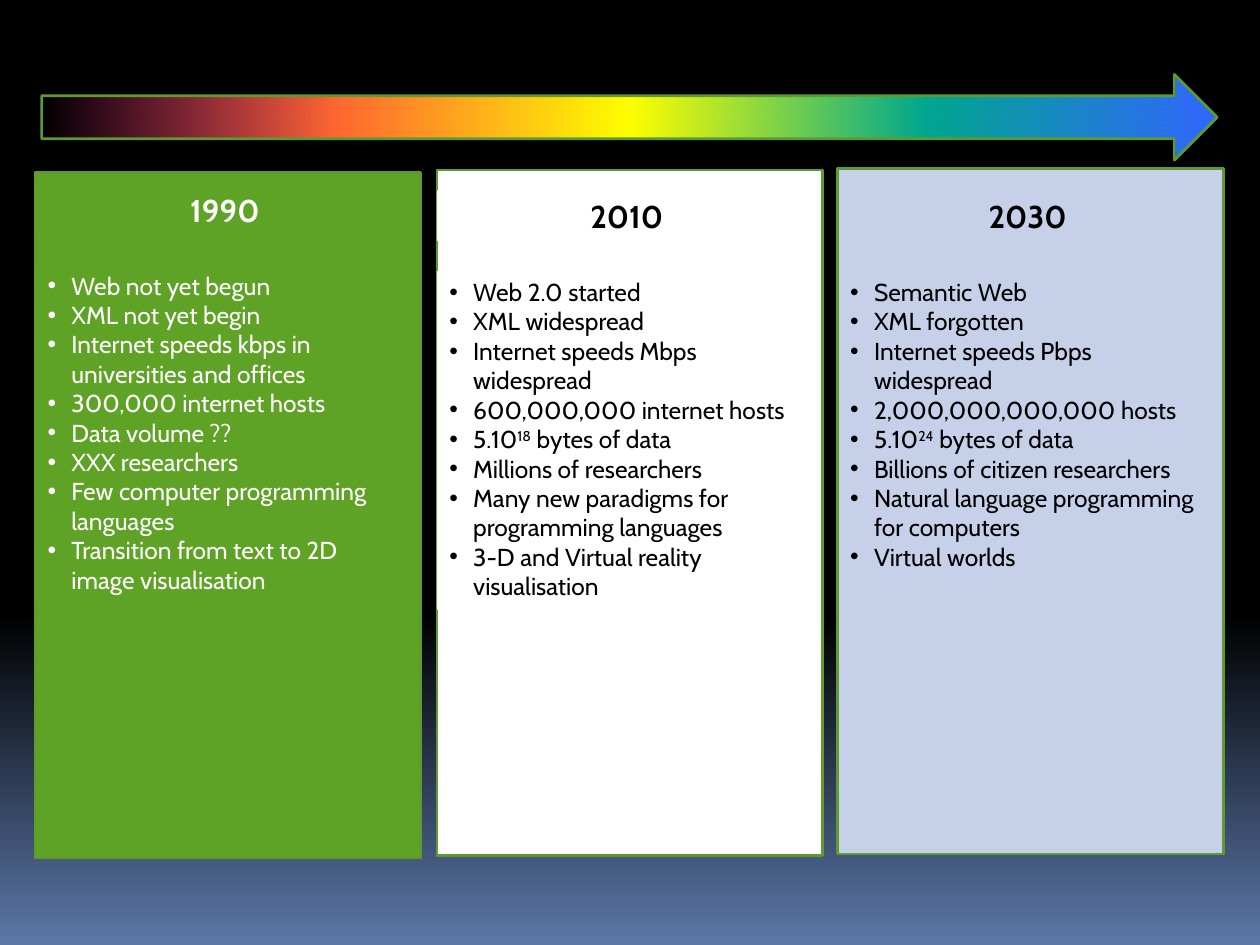
from lxml import etree
from pptx import Presentation
from pptx.dml.color import RGBColor
from pptx.enum.shapes import MSO_SHAPE
from pptx.enum.text import MSO_AUTO_SIZE, PP_ALIGN
from pptx.oxml.ns import qn
from pptx.util import Cm, Pt

RECTANGLE, RIGHT_ARROW = MSO_SHAPE.RECTANGLE, MSO_SHAPE.RIGHT_ARROW
GROW = MSO_AUTO_SIZE.SHAPE_TO_FIT_TEXT
CENTER, LEFT = PP_ALIGN.CENTER, PP_ALIGN.LEFT

BLACK = RGBColor(0x00, 0x00, 0x00)
WHITE = RGBColor(0xFF, 0xFF, 0xFF)
GREEN = RGBColor(0x5F, 0xA3, 0x26)
OUTLINE = RGBColor(0x5E, 0x9B, 0x2C)
PALE_BLUE = RGBColor(0xC7, 0xD0, 0xE9)
STEEL_BLUE = RGBColor(0x5B, 0x77, 0xA8)
PINK = RGBColor(0xFF, 0x33, 0x99)
ORANGE = RGBColor(0xFF, 0x66, 0x33)
YELLOW = RGBColor(0xFF, 0xFF, 0x00)
TEAL = RGBColor(0x01, 0xA7, 0x8F)
BLUE = RGBColor(0x33, 0x66, 0xFF)

PANEL_WIDTH, PANEL_HEIGHT = Cm(7.77), Cm(13.82)
TEXT_WIDTH, HEADING_HEIGHT = Cm(7.65), Cm(1.02)
HEADING_FORMAT = {"name": "Cabin", "size": Pt(18), "bold": True}
LIST_FORMAT = {"name": "Cabin", "size": Pt(14), "bold": False}


def paint_gradient(fill, element, angle, stops):
    """Fill with (percent, colour, opacity percent) stops."""
    fill.gradient()
    fill.gradient_angle = angle
    stop_list = next(element.iter(qn("a:gsLst")))
    for stop in list(stop_list):
        stop_list.remove(stop)
    for percent, color, opacity in stops:
        stop = etree.SubElement(stop_list, qn("a:gs"), pos=str(percent * 1000))
        shade = etree.SubElement(stop, qn("a:srgbClr"), val=str(color))
        if opacity < 100:
            etree.SubElement(shade, qn("a:alpha"), val=str(opacity * 1000))


def add_text(group, position, lines, text_format, color, fill_color, bulleted):
    """Text between ^ marks becomes superscript."""
    box = group.shapes.add_textbox(*position)
    if fill_color is not None:
        box.fill.solid()
        box.fill.fore_color.rgb = fill_color
    frame = box.text_frame
    frame.word_wrap = True
    frame.auto_size = GROW
    for number, line in enumerate(lines):
        para = frame.paragraphs[0] if number == 0 else frame.add_paragraph()
        para.alignment = LEFT if bulleted else CENTER
        if bulleted:
            properties = para._p.get_or_add_pPr()
            properties.set("marL", str(Cm(0.48)))
            properties.set("indent", str(Cm(-0.48)))
            etree.SubElement(properties, qn("a:buFont"), typeface="Arial")
            etree.SubElement(properties, qn("a:buChar"), char="•")
        for index, part in enumerate(line.split("^")):
            span = para.add_run()
            span.text = part
            for name, value in text_format.items():
                setattr(span.font, name, value)
            span.font.color.rgb = color
            if index % 2:
                span._r.get_or_add_rPr().set("baseline", "30000")


deck = Presentation()
deck.slide_width, deck.slide_height = Cm(25.4), Cm(19.05)
page = deck.slides.add_slide(deck.slide_layouts[6])
paint_gradient(page.background.fill, page.element, 270,
               [(0, BLACK, 100), (65, BLACK, 100), (100, STEEL_BLUE, 100)])

arrow = page.shapes.add_shape(RIGHT_ARROW, Cm(0.84), Cm(1.5), Cm(23.7), Cm(1.73))
arrow.shadow.inherit = False
paint_gradient(arrow.fill, arrow.element, 0,
               [(0, PINK, 0), (25, ORANGE, 100), (50, YELLOW, 100),
                (75, TEAL, 100), (100, BLUE, 100)])
arrow.line.color.rgb = OUTLINE
arrow.line.width = Pt(1.5)

# left, panel top, heading top, list top, list height, panel, text fill, text, year, items
eras = [
    (0.71, 3.48, 3.73, 5.33, 6.83, GREEN, GREEN, WHITE, "1990", [
        "Web not yet begun",
        "XML not yet begin",
        "Internet speeds kbps in universities and offices",
        "300,000 internet hosts",
        "Data volume ??",
        "XXX researchers",
        "Few computer programming languages",
        "Transition from text to 2D image visualisation",
    ]),
    (8.81, 3.43, 3.84, 5.46, 6.83, WHITE, WHITE, BLACK, "2010", [
        "Web 2.0 started",
        "XML widespread",
        "Internet speeds Mbps widespread",
        "600,000,000 internet hosts",
        "5.10^18^ bytes of data",
        "Millions of researchers",
        "Many new paradigms for programming languages",
        "3-D and Virtual reality visualisation",
    ]),
    (16.89, 3.4, 3.84, 5.46, 6.25, PALE_BLUE, None, BLACK, "2030", [
        "Semantic Web",
        "XML forgotten",
        "Internet speeds Pbps widespread",
        "2,000,000,000,000 hosts",
        "5.10^24^ bytes of data",
        "Billions of citizen researchers",
        "Natural language programming for computers",
        "Virtual worlds",
    ]),
]

for (left, panel_top, heading_top, list_top, list_height,
     panel_color, text_fill, text_color, year, items) in eras:
    group = page.shapes.add_group_shape()
    panel = group.shapes.add_shape(RECTANGLE, Cm(left), Cm(panel_top),
                                   PANEL_WIDTH, PANEL_HEIGHT)
    panel.shadow.inherit = False
    panel.fill.solid()
    panel.fill.fore_color.rgb = panel_color
    panel.line.color.rgb = OUTLINE
    panel.line.width = Pt(1.5)
    add_text(group, (Cm(left), Cm(heading_top), TEXT_WIDTH, HEADING_HEIGHT),
             [year], HEADING_FORMAT, text_color, text_fill, False)
    add_text(group, (Cm(left), Cm(list_top), TEXT_WIDTH, Cm(list_height)),
             items, LIST_FORMAT, text_color, text_fill, True)

deck.save("out.pptx")
